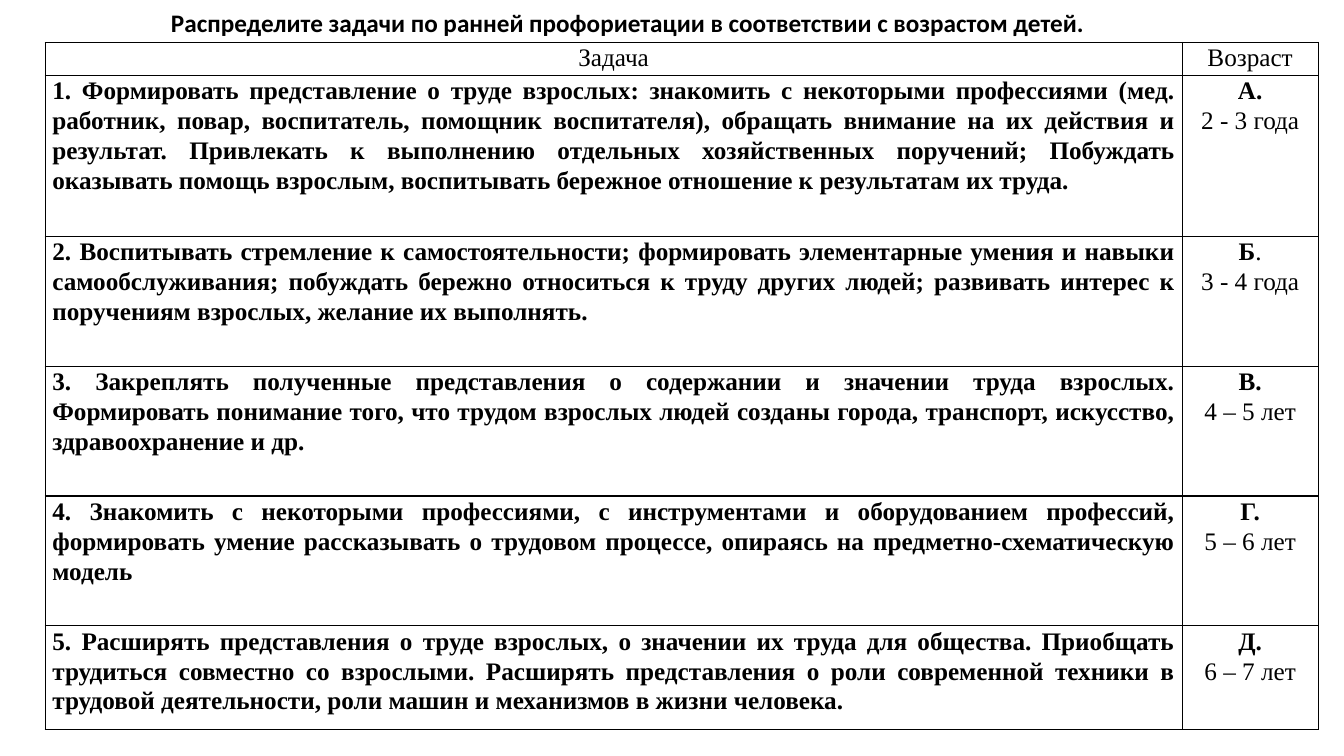
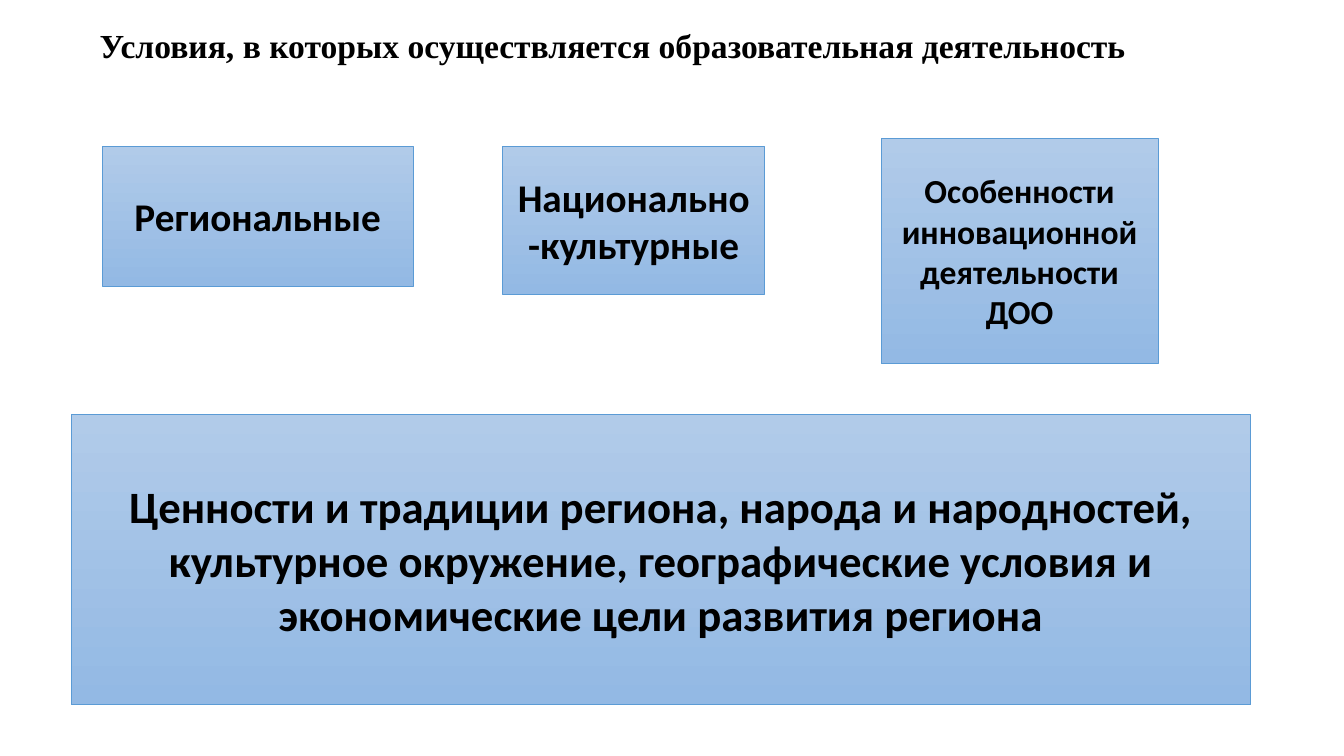
from lxml import etree
from pptx import Presentation
from pptx.dml.color import RGBColor
from pptx.enum.shapes import MSO_SHAPE
from pptx.enum.text import MSO_ANCHOR, MSO_AUTO_SIZE, PP_ALIGN
from pptx.oxml.ns import qn
from pptx.util import Cm, Pt

RECTANGLE = MSO_SHAPE.RECTANGLE
LEFT, CENTER, JUSTIFY = PP_ALIGN.LEFT, PP_ALIGN.CENTER, PP_ALIGN.JUSTIFY
MIDDLE = MSO_ANCHOR.MIDDLE
GROW = MSO_AUTO_SIZE.SHAPE_TO_FIT_TEXT

# Shared look
SANS, SERIF = "Calibri", "Times New Roman"
BLACK, BOX_TOP, BOX_BOTTOM, BOX_LINE = "000000", "B1CBE9", "93B9E4", "5B9BD5"

# Table content: task, bold letter, plain mark after it, age
TASKS = [
    ("1. Формировать представление о труде взрослых: знакомить с некоторыми "
     "профессиями (мед. работник, повар, воспитатель, помощник воспитателя), "
     "обращать внимание на их действия и результат. Привлекать к выполнению "
     "отдельных хозяйственных поручений; Побуждать оказывать помощь взрослым, "
     "воспитывать бережное отношение к результатам их труда.",
     "А.", "", "2 - 3 года"),
    ("2. Воспитывать стремление к самостоятельности; формировать элементарные "
     "умения и навыки самообслуживания; побуждать бережно относиться к труду "
     "других людей; развивать интерес к поручениям взрослых, желание их выполнять.",
     "Б", ".", "3 - 4 года"),
    ("3. Закреплять полученные представления о содержании и значении труда "
     "взрослых. Формировать понимание того, что трудом взрослых людей созданы "
     "города, транспорт, искусство, здравоохранение и др.",
     "В.", "", "4 – 5 лет"),
    ("4. Знакомить с некоторыми профессиями, с инструментами и оборудованием "
     "профессий, формировать умение рассказывать о трудовом процессе, опираясь "
     "на предметно-схематическую модель",
     "Г.", "", "5 – 6 лет"),
    ("5. Расширять представления о труде взрослых, о значении их труда для "
     "общества. Приобщать трудиться совместно со взрослыми. Расширять "
     "представления о роли современной техники в трудовой деятельности, роли "
     "машин и механизмов в жизни человека.",
     "Д.", "", "6 – 7 лет"),
]
COLUMN_WIDTHS = (28.65, 3.43)
ROW_HEIGHTS = (0.83, 4.06, 3.27, 3.27, 3.27, 2.62)

# Condition boxes: text, left, top, width, height, text size
CONDITIONS = [
    ("Региональные", 2.57, 3.68, 7.85, 3.53, 28),
    ("Национально-культурные", 12.67, 3.68, 6.6, 3.73, 28),
    ("Особенности инновационной деятельности ДОО", 22.2, 3.48, 6.99, 5.69, 24),
    ("Ценности и традиции региона, народа и народностей, культурное окружение, "
     "географические условия и экономические цели развития региона",
     1.8, 10.44, 29.72, 7.32, 32),
]


def color(value):
    return RGBColor.from_string(value)


def write(p, text, size=18, font=SANS, bold=True, align=LEFT, spacing=None):
    """Add a formatted run to a paragraph."""
    p.alignment = align
    if spacing:
        p.line_spacing = spacing
    r = p.add_run()
    r.text = text
    r.font.size, r.font.name, r.font.bold = Pt(size), font, bold
    r.font.color.rgb = color(BLACK)


def add_title(s, text, left, top, width, height, **fmt):
    tf = s.shapes.add_textbox(Cm(left), Cm(top), Cm(width), Cm(height)).text_frame
    tf.word_wrap = True
    tf.auto_size = GROW
    write(tf.paragraphs[0], text, **fmt)


def add_box(s, text, left, top, width, height, size):
    sp = s.shapes.add_shape(RECTANGLE, Cm(left), Cm(top), Cm(width), Cm(height))
    sp.shadow.inherit = False
    sp.fill.gradient()
    sp.fill.gradient_angle = 270
    for stop, value in zip(sp.fill.gradient_stops, (BOX_TOP, BOX_BOTTOM)):
        stop.color.rgb = color(value)
    sp.line.color.rgb = color(BOX_LINE)
    sp.line.width = Pt(0.5)
    tf = sp.text_frame
    tf.word_wrap = True
    tf.vertical_anchor = MIDDLE
    write(tf.paragraphs[0], text, size=size, align=CENTER)


def format_cell(cell):
    """Give a cell thin black borders, no fill and narrow margins."""
    tc_pr = cell._tc.get_or_add_tcPr()
    for side in ("a:lnL", "a:lnR", "a:lnT", "a:lnB"):
        ln = etree.SubElement(tc_pr, qn(side), w=str(Pt(1)))
        fill = etree.SubElement(ln, qn("a:solidFill"))
        etree.SubElement(fill, qn("a:srgbClr"), val=BLACK)
    cell.fill.background()
    cell.margin_left = cell.margin_right = Cm(0.18)
    cell.margin_top = cell.margin_bottom = 0


def write_cell(cell, *lines, align=CENTER):
    """Write lines, each a list of (text, bold) runs, as paragraphs."""
    tf = cell.text_frame
    for i, runs in enumerate(lines):
        p = tf.add_paragraph() if i else tf.paragraphs[0]
        for text, bold in runs:
            if text:
                write(p, text, font=SERIF, bold=bold, align=align, spacing=1.07)


def add_task_table(s, left, top):
    table = s.shapes.add_table(
        len(ROW_HEIGHTS), len(COLUMN_WIDTHS), Cm(left), Cm(top),
        Cm(sum(COLUMN_WIDTHS)), Cm(sum(ROW_HEIGHTS))).table
    for column, width in zip(table.columns, COLUMN_WIDTHS):
        column.width = Cm(width)
    for row, height in zip(table.rows, ROW_HEIGHTS):
        row.height = Cm(height)
    for cell in table.iter_cells():
        format_cell(cell)
    for i, heading in enumerate(("Задача", "Возраст")):
        write_cell(table.cell(0, i), [(heading, False)])
    for i, (task, letter, mark, age) in enumerate(TASKS, 1):
        write_cell(table.cell(i, 0), [(task, True)], align=JUSTIFY)
        write_cell(table.cell(i, 1), [(letter, True), (mark, False)], [(age, False)])


def main():
    prs = Presentation()
    prs.slide_width, prs.slide_height = Cm(33.87), Cm(19.05)
    blank = prs.slide_layouts[6]

    # Tasks by age
    s = prs.slides.add_slide(blank)
    add_title(s, "Распределите задачи по ранней профориетации в соответствии "
              "с возрастом детей.", 4.06, 0.05, 25.73, 1.02)
    add_task_table(s, 1.14, 1.07)

    # Conditions
    s = prs.slides.add_slide(blank)
    add_title(s, "Условия, в которых осуществляется образовательная деятельность",
              2.26, 0.51, 28.47, 1.27, size=24, font=SERIF)
    for condition in CONDITIONS:
        add_box(s, *condition)

    prs.save("out.pptx")


if __name__ == "__main__":
    main()
